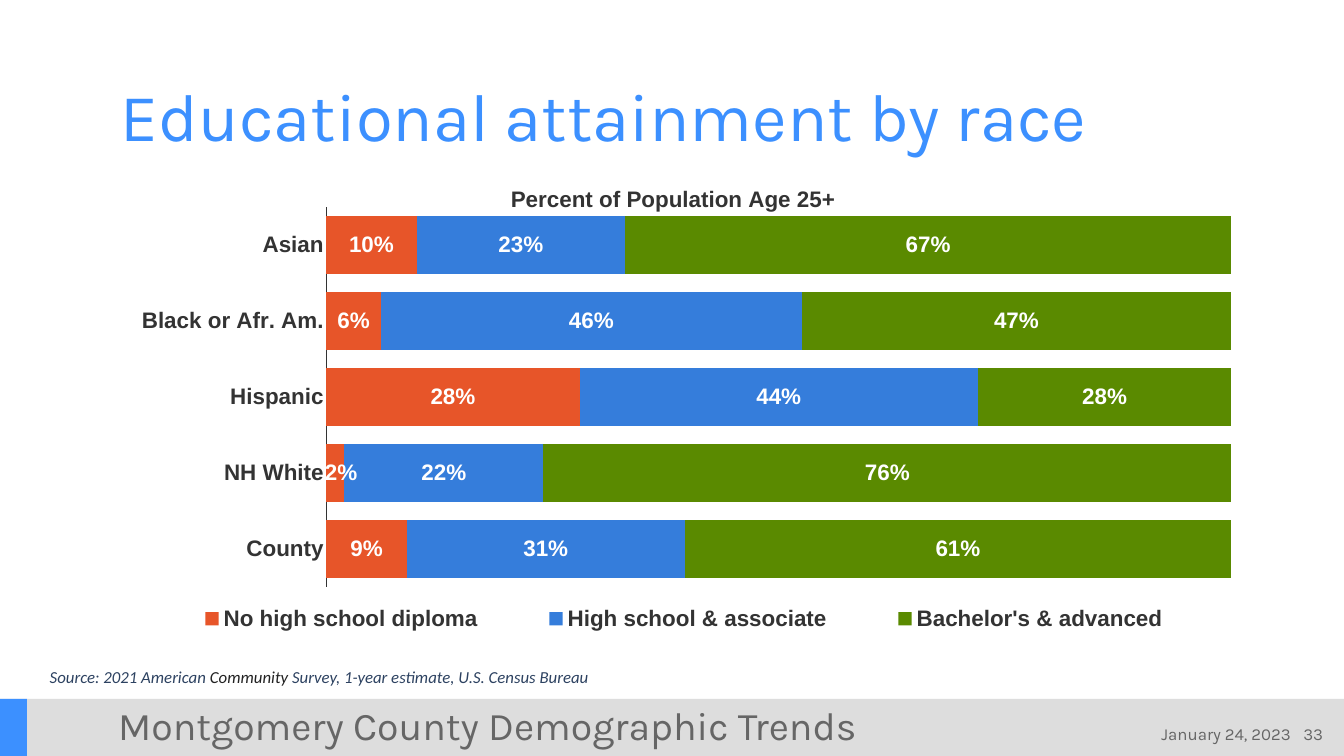
from dataclasses import dataclass

from lxml import etree
from pptx import Presentation
from pptx.chart.data import CategoryChartData
from pptx.dml.color import RGBColor
from pptx.enum.chart import XL_CHART_TYPE, XL_LABEL_POSITION, XL_LEGEND_POSITION, XL_TICK_MARK
from pptx.enum.shapes import MSO_SHAPE
from pptx.enum.text import MSO_ANCHOR, PP_ALIGN
from pptx.oxml.ns import qn
from pptx.util import Pt

EMU_PER_PX = 9144
RECTANGLE = MSO_SHAPE.RECTANGLE
STACKED_BAR = XL_CHART_TYPE.BAR_STACKED_100
CENTER_LABEL = XL_LABEL_POSITION.CENTER
LEGEND_BOTTOM = XL_LEGEND_POSITION.BOTTOM
NO_TICK = XL_TICK_MARK.NONE
TOP, MIDDLE, BOTTOM = MSO_ANCHOR.TOP, MSO_ANCHOR.MIDDLE, MSO_ANCHOR.BOTTOM
LEFT, RIGHT = PP_ALIGN.LEFT, PP_ALIGN.RIGHT


@dataclass(frozen=True)
class Theme:
    accent: str = "3C90FF"
    band: str = "DDDDDD"
    footer: str = "666666"
    chart_text: str = "333333"
    label: str = "FFFFFF"
    source: str = "2D4261"
    source_dark: str = "222222"
    series: tuple = ("E75529", "357DDB", "5A8A00")
    heading_font: str = "Karla"
    chart_font: str = "Arial"
    source_font: str = "Calibri"
    title_size: int = 72
    footer_size: int = 42
    chart_size: int = 24
    small_size: int = 18


CATEGORIES = ("Asian", "Black or Afr. Am.", "Hispanic", "NH White", "County")
ATTAINMENT = {
    "No high school diploma": (0.10, 0.06, 0.28, 0.02, 0.09),
    "High school & associate": (0.23, 0.46, 0.44, 0.22, 0.31),
    "Bachelor's & advanced": (0.67, 0.47, 0.28, 0.76, 0.61),
}


def px(*lengths):
    return [length * EMU_PER_PX for length in lengths]


def place(element, index, **fractions):
    for existing in element.findall(qn("c:layout")):
        element.remove(existing)
    layout = etree.Element(qn("c:layout"))
    manual = etree.SubElement(layout, qn("c:manualLayout"))
    for name, value in fractions.items():
        etree.SubElement(manual, qn(f"c:{name}")).set("val", str(value))
    element.insert(index, layout)


class SlideBuilder:
    def __init__(self, slide, theme):
        self.slide = slide
        self.theme = theme

    def style(self, font, name, size, color, bold=False, italic=False):
        font.name = name
        font.size = Pt(size)
        font.bold = bold
        font.italic = italic
        font.color.rgb = RGBColor.from_string(color)

    def chart_style(self, font, color):
        self.style(font, self.theme.chart_font, self.theme.chart_size, color, bold=True)

    def rectangle(self, box, color):
        shape = self.slide.shapes.add_shape(RECTANGLE, *px(*box))
        shape.shadow.inherit = False
        shape.fill.solid()
        shape.fill.fore_color.rgb = RGBColor.from_string(color)
        shape.line.fill.background()

    def text(self, box, runs, font, size, anchor=TOP, align=LEFT,
             insets=(0, 0, 0, 0), spacing=None, italic=False):
        frame = self.slide.shapes.add_textbox(*px(*box)).text_frame
        frame.word_wrap = True
        frame.vertical_anchor = anchor
        (frame.margin_left, frame.margin_top,
         frame.margin_right, frame.margin_bottom) = px(*insets)
        paragraph = frame.paragraphs[0]
        paragraph.alignment = align
        if spacing:
            paragraph.line_spacing = spacing
        for content, color in runs:
            run = paragraph.add_run()
            run.text = content
            self.style(run.font, font, size, color, italic=italic)

    def stacked_chart(self, box, title, categories, values_by_series):
        theme = self.theme
        data = CategoryChartData(number_format="0%")
        data.categories = categories
        for name, values in values_by_series.items():
            data.add_series(name, values)
        chart = self.slide.shapes.add_chart(STACKED_BAR, *px(*box), data).chart
        self.chart_style(chart.font, theme.chart_text)

        chart.has_title = True
        title_frame = chart.chart_title.text_frame
        title_frame.text = title
        self.chart_style(title_frame.paragraphs[0].runs[0].font, theme.chart_text)
        place(chart.chart_title._element, 1, xMode="edge", yMode="edge", x=0.36, y=0.02)

        chart.has_legend = True
        chart.legend.position = LEGEND_BOTTOM
        chart.legend.include_in_layout = False
        self.chart_style(chart.legend.font, theme.chart_text)
        place(chart.legend._element, 1, xMode="edge", yMode="edge",
              x=0.05, y=0.89, w=0.92, h=0.08)
        place(chart._chartSpace.chart.plotArea, 0, layoutTarget="inner",
              xMode="edge", yMode="edge", x=0.207, y=0.076, w=0.767, h=0.788)

        category_axis = chart.category_axis
        category_axis.reverse_order = True
        category_axis.major_tick_mark = NO_TICK
        category_axis.minor_tick_mark = NO_TICK
        category_axis.has_major_gridlines = False
        category_axis.format.line.color.rgb = RGBColor.from_string(theme.chart_text)
        category_axis.format.line.width = Pt(0.25)
        self.chart_style(category_axis.tick_labels.font, theme.chart_text)
        chart.value_axis.has_major_gridlines = False
        chart.value_axis.visible = False

        plot = chart.plots[0]
        plot.gap_width = 30
        plot.overlap = 100
        plot.vary_by_categories = False
        for series, color in zip(plot.series, theme.series):
            series.format.fill.solid()
            series.format.fill.fore_color.rgb = RGBColor.from_string(color)
            labels = series.data_labels
            labels.show_value = True
            labels.number_format = "0%"
            labels.number_format_is_linked = False
            labels.position = CENTER_LABEL
            self.chart_style(labels.font, theme.label)
        return chart

    def shift_label(self, chart, series_index, point_index, offset):
        label = chart.plots[0].series[series_index].points[point_index].data_label
        self.chart_style(label.font, self.theme.label)
        label.position = CENTER_LABEL
        place(label._get_or_add_dLbl(), 1, x=offset, y=0)


def main():
    presentation = Presentation()
    presentation.slide_width, presentation.slide_height = px(2000, 1125)
    theme = Theme()
    builder = SlideBuilder(presentation.slides.add_slide(presentation.slide_layouts[6]), theme)

    builder.rectangle((0, 1040, 2000, 85), theme.band)
    builder.rectangle((0, 1040, 40, 85), theme.accent)
    builder.text((176, 1049, 1640, 60), [("Montgomery County Demographic Trends", theme.footer)],
                 theme.heading_font, theme.footer_size, MIDDLE)
    for box, content in (((1872, 1082, 97, 25), "33"),
                         ((1640, 1082, 281, 25), "January 24, 2023")):
        builder.text(box, [(content, theme.footer)],
                     theme.heading_font, theme.small_size, BOTTOM, RIGHT)
    builder.text((180, 50, 1640, 180), [("Educational attainment by race", theme.accent)],
                 theme.heading_font, theme.title_size, BOTTOM,
                 insets=(0, 5, 10, 0), spacing=0.8)

    chart = builder.stacked_chart((122, 254, 1756, 717), "Percent of Population Age 25+",
                                  CATEGORIES, ATTAINMENT)
    builder.shift_label(chart, 0, CATEGORIES.index("NH White"), 0.005)

    builder.text((59, 984, 1093, 46),
                 [("Source: 2021 American ", theme.source),
                  ("Community", theme.source_dark),
                  (" Survey, 1-year estimate, U.S. Census Bureau", theme.source)],
                 theme.source_font, theme.small_size, insets=(15, 8, 15, 8), italic=True)
    presentation.save("out.pptx")


if __name__ == "__main__":
    main()
